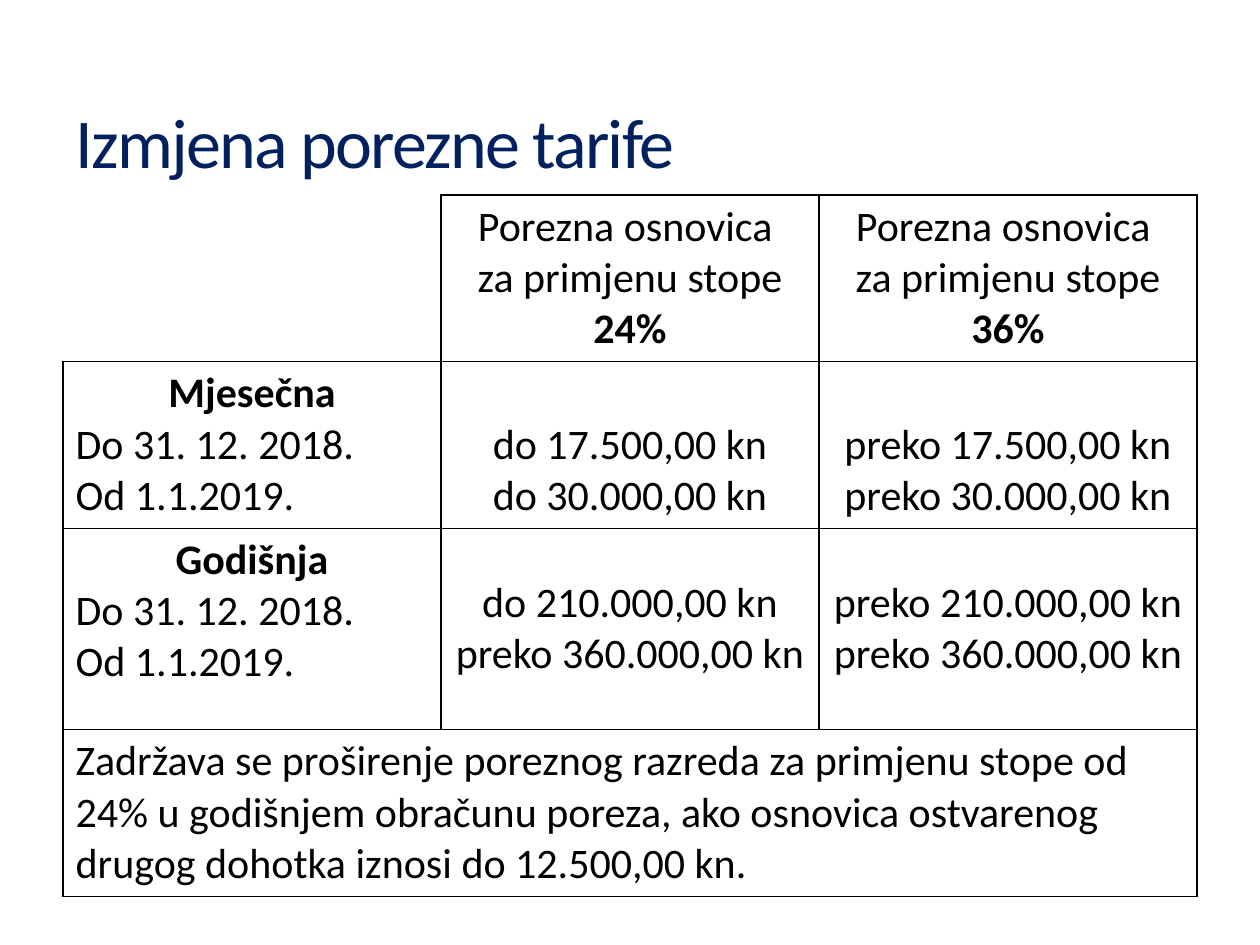
from lxml import etree
from pptx import Presentation
from pptx import util as u
from pptx.dml.color import RGBColor
from pptx.enum import text
from pptx.oxml.ns import qn

FONT = "Calibri"
INK = "000000"
NAVY = "002060"
MID, LEFT = text.PP_ALIGN.CENTER, text.PP_ALIGN.LEFT
TOP, CENTER, LOW = (text.MSO_ANCHOR.TOP, text.MSO_ANCHOR.MIDDLE,
                    text.MSO_ANCHOR.BOTTOM)


def color(code):
    return RGBColor.from_string(code)


def style(run, size, code, bold=False):
    run.font.name = FONT
    run.font.size = u.Pt(size)
    run.font.bold = bold
    run.font.color.rgb = color(code)


def add_title(slide, words):
    title = slide.shapes.title
    title.left, title.top = u.Cm(1.27), u.Cm(1.47)
    title.width, title.height = u.Cm(22.86), u.Cm(2.74)
    frame = title.text_frame
    frame.text = words
    frame.vertical_anchor = CENTER
    para = frame.paragraphs[0]
    para.alignment = LEFT
    run = para.runs[0]
    style(run, 40, NAVY)
    run.font._element.set("spc", "-100")


def set_edges(cell, sides):
    """Rule the given sides of a cell and clear the others."""
    props = cell._tc.get_or_add_tcPr()
    for side in "LRTB":
        line = etree.SubElement(props, qn(f"a:ln{side}"), w=str(u.Pt(1)))
        if side in sides:
            fill = etree.SubElement(line, qn("a:solidFill"))
            etree.SubElement(fill, qn("a:srgbClr"), val=INK)
        else:
            etree.SubElement(line, qn("a:noFill"))


def fill_cell(cell, lines, anchor=TOP):
    """Each line is an alignment and its (words, bold) runs."""
    cell.vertical_anchor = anchor
    frame = cell.text_frame
    for i, (align, parts) in enumerate(lines):
        para = frame.add_paragraph() if i else frame.paragraphs[0]
        para.alignment = align
        for words, bold in parts:
            run = para.add_run()
            run.text = words
            style(run, 24, INK, bold)


def add_grid(slide, heights):
    shape = slide.shapes.add_table(len(heights), 3, u.Cm(1.27), u.Cm(3.93),
                                   u.Cm(22.86), u.Cm(sum(heights)))
    grid = shape.table
    grid.first_row = grid.horz_banding = False
    for row, high in zip(grid.rows, heights):
        row.height = u.Cm(high)
    for col in grid.columns:
        col.width = u.Cm(7.62)
    for i, cell in enumerate(grid.iter_cells()):
        set_edges(cell, "LRTB" if i else "RB")
        cell.fill.background()
    return grid


def main():
    deck = Presentation()
    deck.slide_width, deck.slide_height = u.Cm(25.4), u.Cm(19.05)
    slide = deck.slides.add_slide(deck.slide_layouts[5])
    add_title(slide, "Izmjena porezne tarife")
    grid = add_grid(slide, [3.36, 3.36, 4.06, 3.36])

    # Rate headings
    for col, rate in enumerate(["24%", "36%"], 1):
        fill_cell(grid.cell(0, col), [
            (MID, [("Porezna osnovica ", False)]),
            (MID, [("za primjenu stope ", False), (rate, True)])])

    # Periods and their limits, set level with the two dates
    periods = [
        ("Mjesečna", LOW,
         ["do 17.500,00 kn", "do 30.000,00 kn"],
         ["preko 17.500,00 kn", "preko 30.000,00 kn"]),
        ("Godišnja", CENTER,
         ["do 210.000,00 kn", "preko 360.000,00 kn"],
         ["preko 210.000,00 kn", "preko 360.000,00 kn"])]
    for row, (name, anchor, *limits) in enumerate(periods, 1):
        dates = ["Do 31. 12. 2018.", "Od 1.1.2019."]
        fill_cell(grid.cell(row, 0), [(MID, [(name, True)])]
                  + [(LEFT, [(date, False)]) for date in dates])
        for col, pair in enumerate(limits, 1):
            fill_cell(grid.cell(row, col),
                      [(MID, [(limit, False)]) for limit in pair], anchor)

    # Closing note across the table
    grid.cell(3, 0).merge(grid.cell(3, 2))
    note = ("Zadržava se proširenje poreznog razreda za primjenu stope od "
            "24% u godišnjem obračunu poreza, ako osnovica ostvarenog "
            "drugog dohotka iznosi do 12.500,00 kn.")
    fill_cell(grid.cell(3, 0), [(LEFT, [(note, False)])])

    deck.save("out.pptx")


if __name__ == "__main__":
    main()
